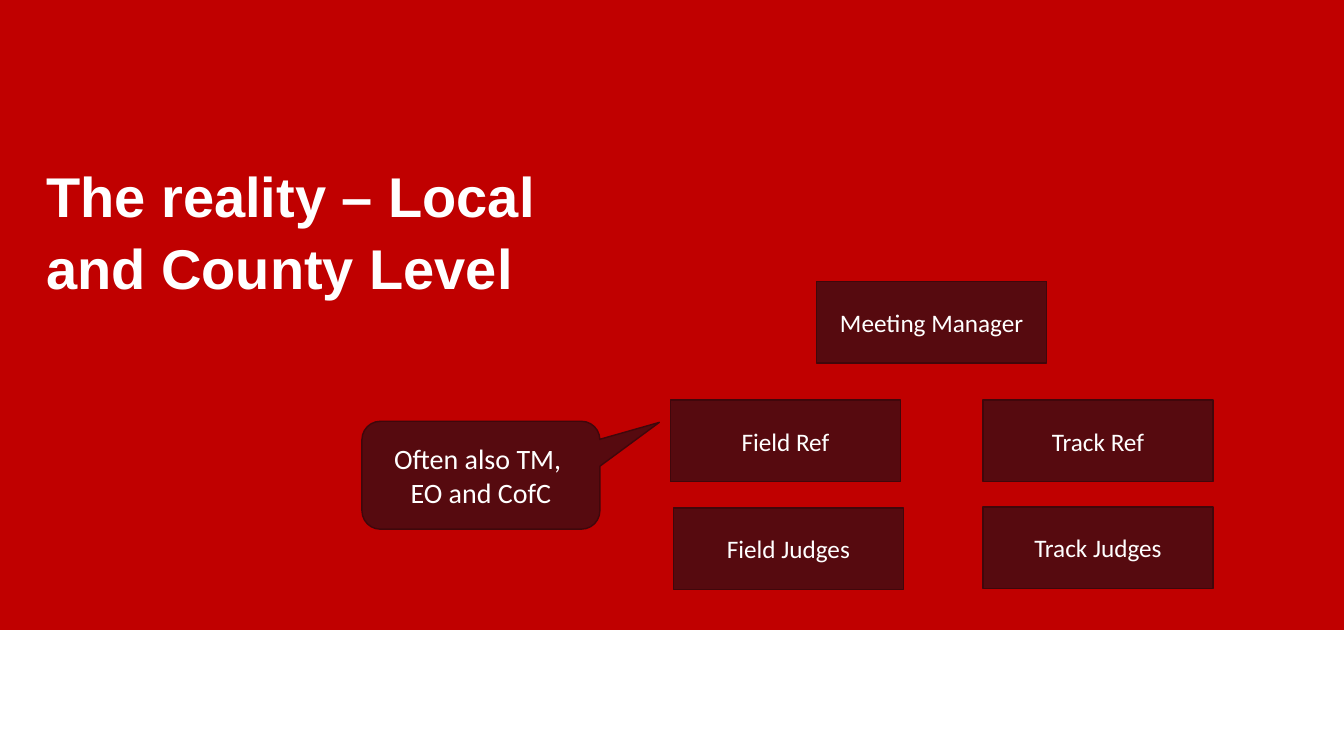
from dataclasses import dataclass

from pptx import Presentation
from pptx.dml.color import RGBColor
from pptx.enum.shapes import MSO_SHAPE
from pptx.enum.text import MSO_ANCHOR, MSO_AUTO_SIZE, PP_ALIGN
from pptx.util import Inches, Length, Pt

RECT = MSO_SHAPE.RECTANGLE
CALLOUT = MSO_SHAPE.ROUNDED_RECTANGULAR_CALLOUT
MIDDLE, BOTTOM = MSO_ANCHOR.MIDDLE, MSO_ANCHOR.BOTTOM
CENTER, LEFT = PP_ALIGN.CENTER, PP_ALIGN.LEFT
FIXED = MSO_AUTO_SIZE.NONE

CELL = 0.1  # grid cell in inches
COLS, ROWS = 133.3, 75
RED, DARK, EDGE, WHITE = "C00000", "560A0F", "40070B", "FFFFFF"


@dataclass
class Box:
    """A labelled shape, placed in grid columns and rows."""
    text: str
    col: float
    row: float
    wide: float = 22.8
    high: float = 8.1
    kind: MSO_SHAPE = RECT
    size: int = 18
    fill: str = DARK
    edge: str = EDGE


BAND = Box("", 0, 62.5, COLS, 12.5, fill=WHITE, edge="")
ROLES = [
    Box("Meeting Manager", 81, 27.9),
    Box("Field Ref", 66.5, 39.7),
    Box("Track Ref", 97.5, 39.7),
    Box("Track Judges", 97.5, 50.3),
    Box("Field Judges", 66.8, 50.4),
]
NOTE = Box("Often also TM, \vEO and CofC", 35.9, 41.8, 23.6, 10.7, CALLOUT, 20)


def grid(count: float) -> Length:
    return Inches(count * CELL)


def color(code: str) -> RGBColor:
    return RGBColor.from_string(code)


def style(par, name: str, size: int, align: PP_ALIGN) -> None:
    par.alignment = align
    par.font.name = name
    par.font.size = Pt(size)
    par.font.color.rgb = color(WHITE)


def draw(slide, box: Box):
    shape = slide.shapes.add_shape(
        box.kind, grid(box.col), grid(box.row), grid(box.wide), grid(box.high))
    shape.shadow.inherit = False
    shape.fill.solid()
    shape.fill.fore_color.rgb = color(box.fill)
    if box.edge:
        shape.line.color.rgb = color(box.edge)
        shape.line.width = Pt(1)
    else:
        shape.line.fill.background()
    if box.text:
        frame = shape.text_frame
        frame.word_wrap = True
        frame.vertical_anchor = MIDDLE
        frame.text = box.text
        par = frame.paragraphs[0]
        style(par, "Calibri", box.size, CENTER)
    return shape


def head(slide, text: str) -> None:
    title = slide.shapes.title
    title.left, title.top = grid(3.6), grid(9.8)
    title.width, title.height = grid(116.7), grid(20.5)
    frame = title.text_frame
    frame.auto_size = FIXED
    frame.vertical_anchor = BOTTOM
    frame.text = text
    par = frame.paragraphs[0]
    style(par, "Arial", 40, LEFT)
    par.font.bold = True
    par.line_spacing = 1.06


def main() -> None:
    deck = Presentation()
    deck.slide_width, deck.slide_height = grid(COLS), grid(ROWS)
    slide = deck.slides.add_slide(deck.slide_layouts.get_by_name("Title Only"))
    slide.background.fill.solid()
    slide.background.fill.fore_color.rgb = color(RED)
    head(slide, "The reality – Local \vand County Level")
    for box in [BAND, *ROLES]:
        draw(slide, box)
    note = draw(slide, NOTE)
    for spot, value in enumerate((0.75, -0.49, 0.17)):
        note.adjustments[spot] = value
    deck.save("out.pptx")


if __name__ == "__main__":
    main()
